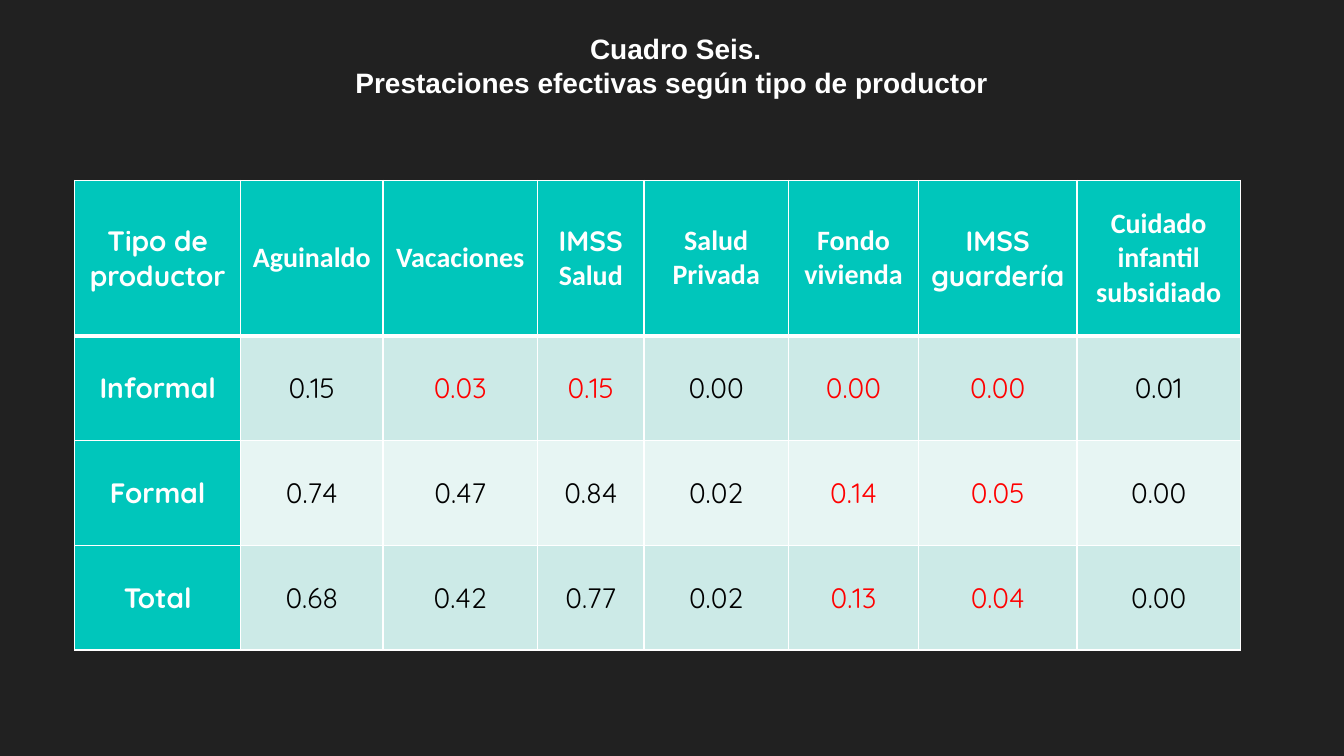
"""Build the slide with the table of benefits by type of producer."""
from lxml.etree import SubElement
from pptx import Presentation
from pptx.dml.color import RGBColor
from pptx.enum.text import MSO_ANCHOR as Anchor, PP_ALIGN as Align
from pptx.oxml.ns import qn
from pptx.util import Cm, Pt

DARK = RGBColor(0x21, 0x21, 0x21)
WHITE = RGBColor(0xFF, 0xFF, 0xFF)
BLACK = RGBColor(0x00, 0x00, 0x00)
RED = RGBColor(0xFF, 0x00, 0x00)
TEAL = RGBColor(0x00, 0xC6, 0xBB)
MINT = RGBColor(0xCC, 0xEA, 0xE7)
PALE = RGBColor(0xE7, 0xF5, 0xF3)
SOFT, PLAIN = "Quicksand", "Calibri"


def write(para, text, font=SOFT, color=WHITE, bold=True, size=20):
    para.text = text
    para.alignment = Align.CENTER
    for run in para.runs:
        run.font.name = font
        run.font.size = Pt(size)
        run.font.bold = bold
        run.font.color.rgb = color


def edge(cell, **widths):
    props = cell._tc.get_or_add_tcPr()
    for side in "LRTB":
        line = SubElement(props, qn(f"a:ln{side}"), w=str(Pt(widths.get(side, 1))))
        fill = SubElement(line, qn("a:solidFill"))
        SubElement(fill, qn("a:srgbClr"), val=str(WHITE))


deck = Presentation()
deck.slide_width, deck.slide_height = Cm(33.87), Cm(19.05)
slide = deck.slides.add_slide(deck.slide_layouts[5])
slide.background.fill.solid()
slide.background.fill.fore_color.rgb = DARK

title = slide.shapes.title
title.left, title.top, title.width, title.height = Cm(2.82), Cm(0.61), Cm(28.42), Cm(2.74)
frame = title.text_frame
frame.word_wrap = True
frame.vertical_anchor = Anchor.TOP
frame.margin_top = Cm(0.19)
write(frame.paragraphs[0],
      "Cuadro Seis.\vPrestaciones efectivas según tipo de productor ", font="Arial")

heads = [
    [("Tipo de productor", SOFT)],
    [("Aguinaldo", PLAIN)],
    [("Vacaciones", PLAIN)],
    [("IMSS", SOFT), ("Salud", PLAIN)],
    [("Salud Privada", PLAIN)],
    [("Fondo vivienda", PLAIN)],
    [("IMSS guardería", SOFT)],
    [("Cuidado infantil subsidiado", PLAIN)],
]
rows = [
    ("Informal", ["0.15", "0.03", "0.15", "0.00", "0.00", "0.00", "0.01"], {2, 3, 5, 6}, MINT),
    ("Formal", ["0.74", "0.47", "0.84", "0.02", "0.14", "0.05", "0.00"], {5, 6}, PALE),
    ("Total", ["0.68", "0.42", "0.77", "0.02", "0.13", "0.04", "0.00"], {5, 6}, MINT),
]
wides = [4.19, 3.58, 3.9, 2.68, 3.64, 3.28, 3.99, 4.12]
highs = [3.91, 2.64, 2.64, 2.64]

grid = slide.shapes.add_table(len(highs), len(wides), Cm(1.88), Cm(4.55),
                              Cm(sum(wides)), Cm(sum(highs))).table
grid.horz_banding = False
for col, wide in zip(grid.columns, wides):
    col.width = Cm(wide)
for row, high in zip(grid.rows, highs):
    row.height = Cm(high)

for c, parts in enumerate(heads):
    cell = grid.cell(0, c)
    edge(cell, B=3)
    cell.fill.solid()
    cell.fill.fore_color.rgb = TEAL
    for i, (text, font) in enumerate(parts):
        body = cell.text_frame
        write(body.add_paragraph() if i else body.paragraphs[0], text, font=font)

for r, (name, values, reds, tint) in enumerate(rows, 1):
    for c, text in enumerate([name] + values):
        cell = grid.cell(r, c)
        edge(cell, T=3 if r == 1 else 1)
        cell.fill.solid()
        cell.fill.fore_color.rgb = tint if c else TEAL
        ink = RED if c in reds else BLACK
        write(cell.text_frame.paragraphs[0], text,
              color=ink if c else WHITE, bold=c == 0)

for cell in grid.iter_cells():
    cell.vertical_anchor = Anchor.MIDDLE
    cell.margin_left = cell.margin_right = Cm(0.18)
    cell.margin_top = cell.margin_bottom = 0

deck.save("out.pptx")
